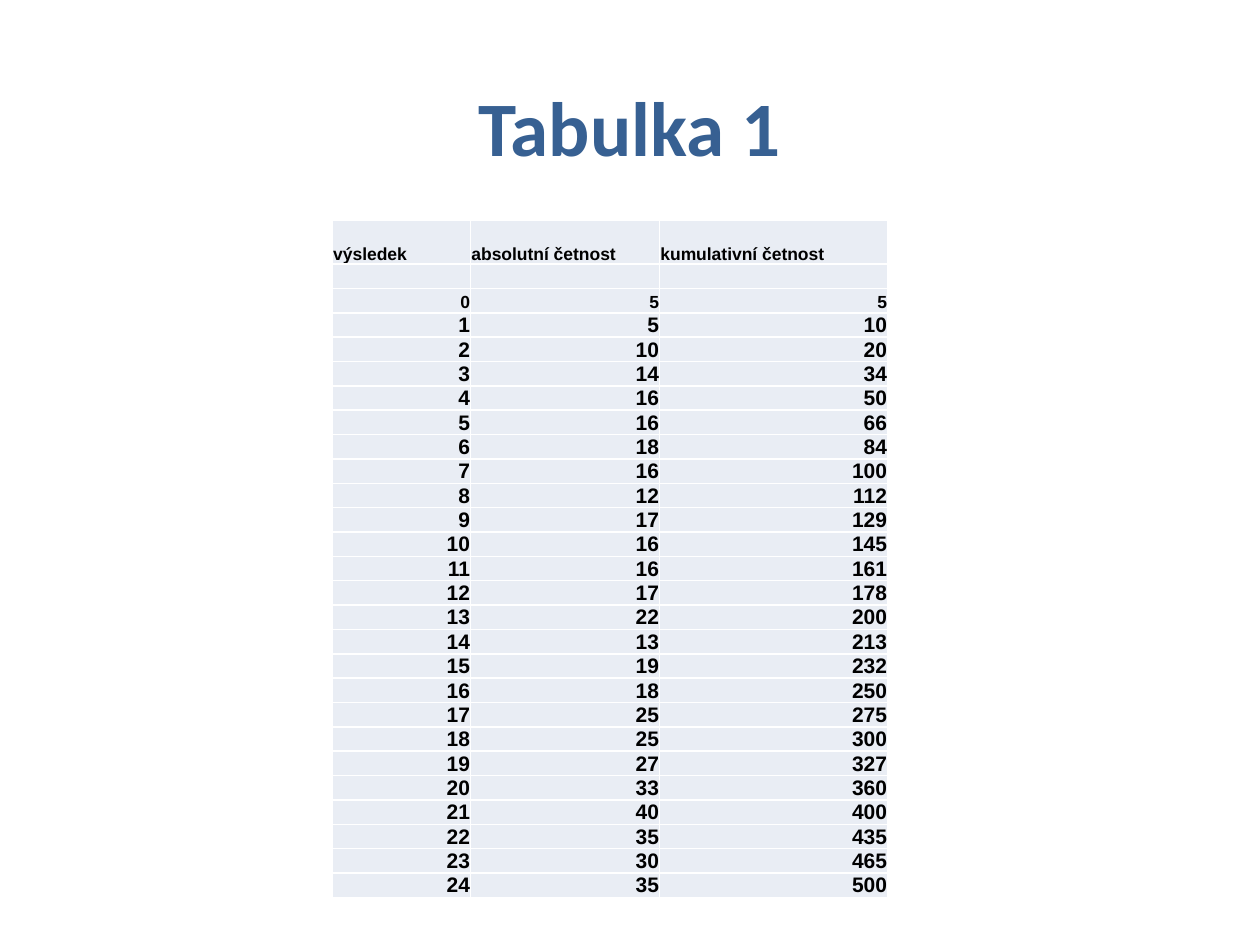
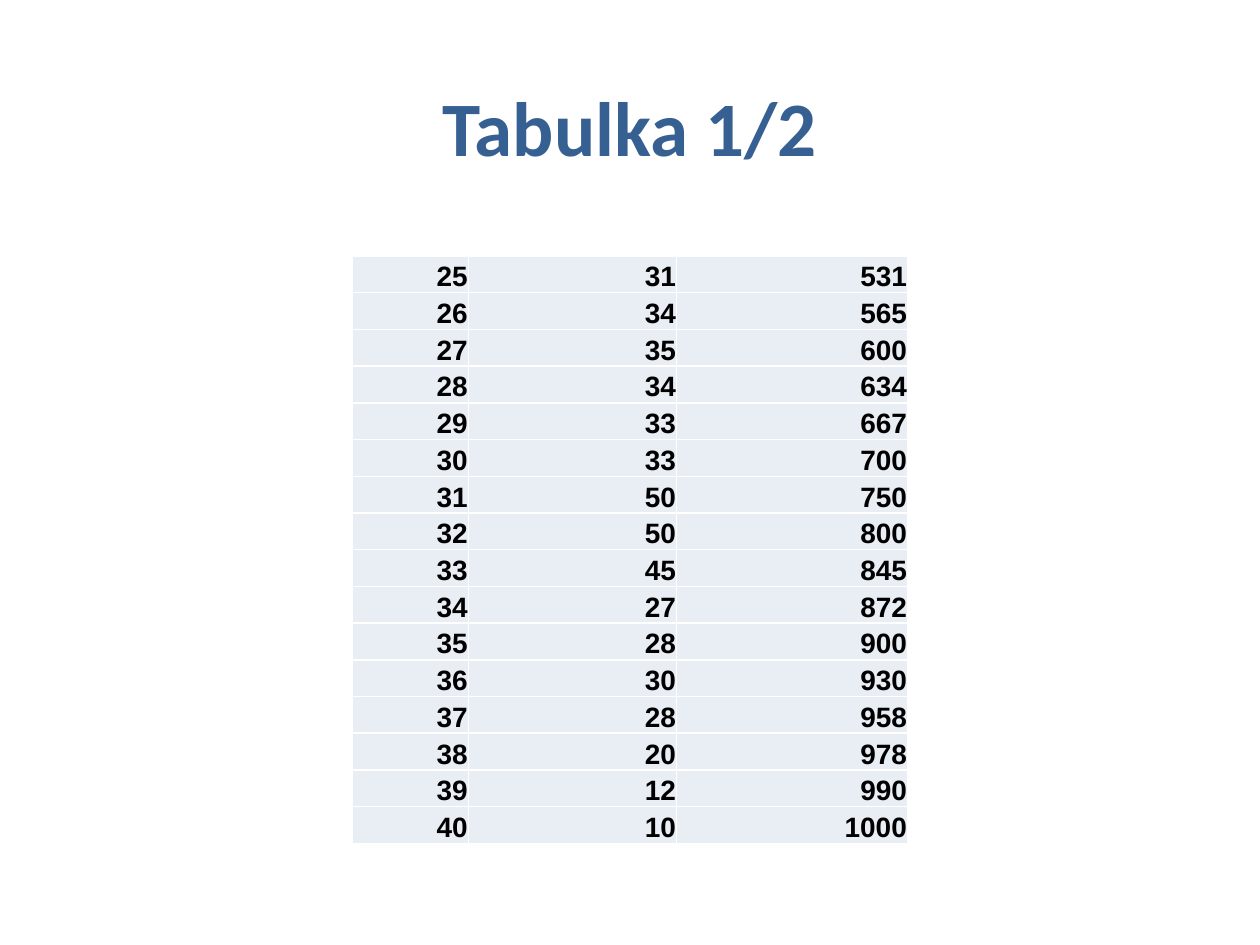
from dataclasses import dataclass
from itertools import accumulate

from lxml.etree import SubElement
from pptx import Presentation
from pptx.dml.color import RGBColor as Rgb
from pptx.enum.text import MSO_ANCHOR as Anchor, PP_ALIGN as Align
from pptx.oxml.ns import qn
from pptx.util import Pt


@dataclass(frozen=True)
class Theme:
    title_color: str = "376092"
    text_color: str = "000000"
    cell_fill: str = "E9EDF4"
    border_color: str = "FFFFFF"
    title_font: str = "Calibri"
    table_font: str = "Arial"
    title_size: float = 44
    small_size: float = 10
    medium_size: float = 12
    large_size: float = 16
    border_width: float = 1
    cell_inset: float = 0.4


THEME = Theme()
TITLE_BOX = (36, 26.64, 648, 90)

HEADINGS = ("výsledek", "absolutní četnost", "kumulativní četnost")
FREQUENCIES = (
    5, 5, 10, 14, 16, 16, 18, 16, 12, 17, 16, 16, 17, 22, 13, 19, 18, 25, 25, 27, 33,
    40, 35, 30, 35, 31, 34, 35, 34, 33, 33, 50, 50, 45, 27, 28, 30, 28, 20, 12, 10,
)
RESULTS = [
    tuple(str(value) for value in row)
    for row in zip(range(len(FREQUENCIES)), FREQUENCIES, accumulate(FREQUENCIES))
]
FIRST_PART = 25


def add_run(paragraph, text, font, size, color):
    run = paragraph.add_run()
    run.text = text
    run.font.name = font
    run.font.size = Pt(size)
    run.font.bold = True
    run.font.color.rgb = Rgb.from_string(color)


def add_title(slide, box, text):
    frame = slide.shapes.add_textbox(*map(Pt, box)).text_frame
    frame.word_wrap = True
    frame.vertical_anchor = Anchor.MIDDLE
    heading = frame.paragraphs[0]
    heading.alignment = Align.CENTER
    add_run(heading, text, THEME.title_font, THEME.title_size, THEME.title_color)


def add_borders(cell):
    """Draw all four sides; borders must precede the fill in the cell's XML."""
    properties = cell._tc.get_or_add_tcPr()
    for side in ("a:lnL", "a:lnR", "a:lnT", "a:lnB"):
        line = SubElement(properties, qn(side), w=str(Pt(THEME.border_width)))
        paint = SubElement(line, qn("a:solidFill"))
        SubElement(paint, qn("a:srgbClr"), val=THEME.border_color)


def fill_cell(cell, text, size):
    """Style one cell; the exact line height keeps tight rows from growing."""
    add_borders(cell)
    cell.fill.solid()
    cell.fill.fore_color.rgb = Rgb.from_string(THEME.cell_fill)
    cell.vertical_anchor = Anchor.BOTTOM
    cell.margin_left = cell.margin_top = cell.margin_right = Pt(THEME.cell_inset)
    cell.margin_bottom = 0
    paragraph = cell.text_frame.paragraphs[0]
    paragraph.line_spacing = Pt(size)
    if text:
        paragraph.alignment = Align.RIGHT if text.isdigit() else Align.LEFT
        add_run(paragraph, text, THEME.table_font, size, THEME.text_color)
    else:
        SubElement(paragraph._p, qn("a:endParaRPr"), sz=str(round(size * 100)))


def add_frequency_table(slide, box, rows, column_widths, row_heights, sizes):
    frame = slide.shapes.add_table(len(rows), len(column_widths), *map(Pt, box))
    table = frame.table
    table.first_row = table.horz_banding = False
    for column, width in zip(table.columns, column_widths):
        column.width = Pt(width)
    for row, texts, height, size in zip(table.rows, rows, row_heights, sizes):
        row.height = Pt(height)
        for cell, text in zip(row.cells, texts):
            fill_cell(cell, text, size)
    frame.height = Pt(box[3])


def add_first_slide(slide):
    rows = [HEADINGS, ("",) * len(HEADINGS), *RESULTS[:FIRST_PART]]
    small_rows = 3
    add_title(slide, TITLE_BOX, "Tabulka 1")
    add_frequency_table(
        slide, (190, 126, 317.3, 409.68), rows,
        column_widths=(79, 108, 130.3),
        row_heights=[24.9] + [13.92] * (len(rows) - 1),
        sizes=[THEME.small_size] * small_rows
        + [THEME.medium_size] * (len(rows) - small_rows),
    )


def add_second_slide(slide):
    rows = RESULTS[FIRST_PART:]
    add_title(slide, TITLE_BOX, "Tabulka 1/2")
    add_frequency_table(
        slide, (201.4, 146.3, 317.2, 336), rows,
        column_widths=(66.2, 119, 132),
        row_heights=[21] * len(rows),
        sizes=[THEME.large_size] * len(rows),
    )


def main():
    deck = Presentation()
    deck.slide_width, deck.slide_height = Pt(720), Pt(540)
    blank = deck.slide_layouts[6]
    for build in (add_first_slide, add_second_slide):
        build(deck.slides.add_slide(blank))
    deck.save("out.pptx")


if __name__ == "__main__":
    main()
